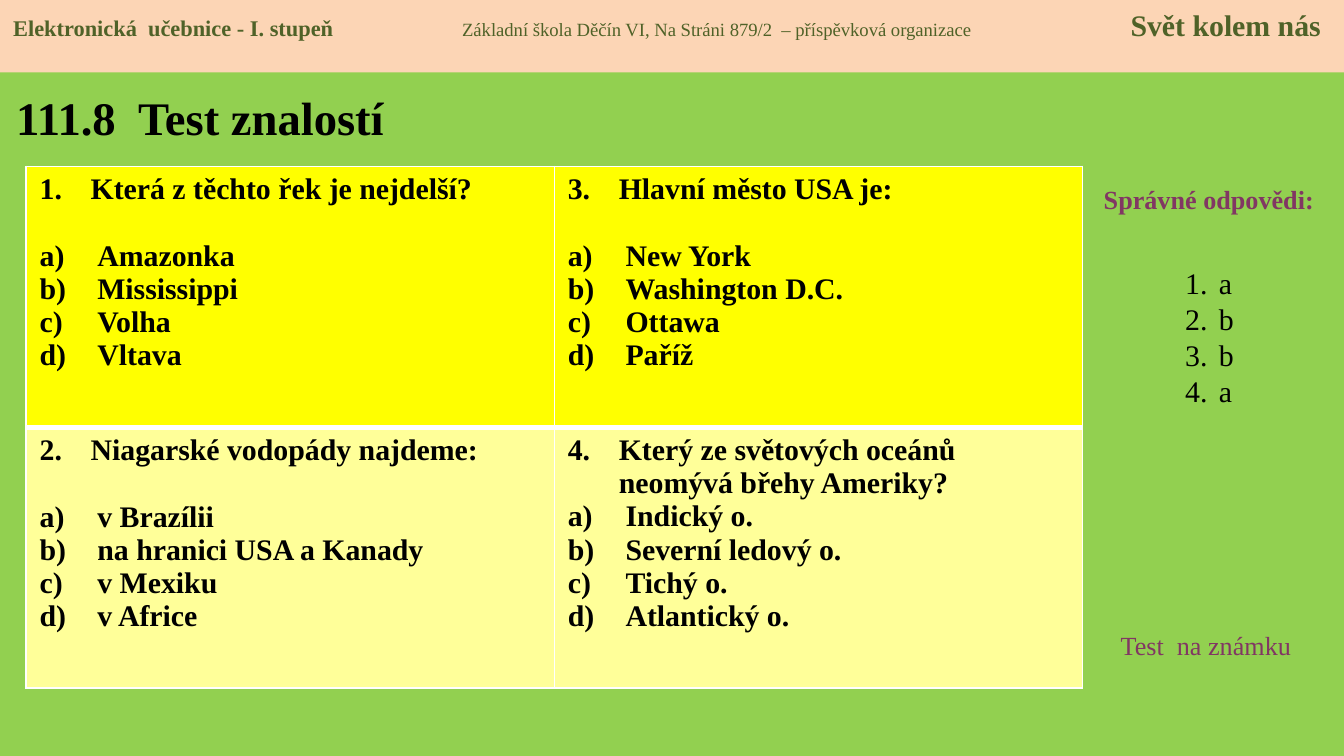
from lxml import etree
from pptx import Presentation
from pptx.dml.color import RGBColor
from pptx.enum.shapes import MSO_SHAPE
from pptx.enum.text import MSO_ANCHOR, PP_ALIGN
from pptx.oxml.ns import qn
from pptx.util import Inches, Pt

RECT = MSO_SHAPE.RECTANGLE
TOP, MIDDLE = MSO_ANCHOR.TOP, MSO_ANCHOR.MIDDLE
LEFT, CENTER = PP_ALIGN.LEFT, PP_ALIGN.CENTER

GREEN = RGBColor(0x92, 0xD0, 0x50)
PEACH = RGBColor(0xFC, 0xD5, 0xB5)
OLIVE = RGBColor(0x4F, 0x62, 0x28)
PLUM = RGBColor(0x81, 0x37, 0x63)
BLACK = RGBColor(0, 0, 0)
WHITE = RGBColor(0xFF, 0xFF, 0xFF)
YELLOW = RGBColor(0xFF, 0xFF, 0)
CREAM = RGBColor(0xFF, 0xFF, 0x99)

FONT = "Times New Roman"
WIDE = Inches(10)
HIGH = WIDE * 9 // 16

# Number, question and options, by table row
QUIZ = [
    [(1, "Která z těchto řek je nejdelší?",
      ["Amazonka", "Mississippi", "Volha", "Vltava"]),
     (3, "Hlavní město USA je:",
      ["New York", "Washington D.C.", "Ottawa", "Paříž"])],
    [(2, "Niagarské vodopády najdeme:",
      ["v Brazílii", "na hranici USA a Kanady", "v Mexiku", "v Africe"]),
     (4, "Který ze světových oceánů neomývá břehy Ameriky?",
      ["Indický o.", "Severní ledový o.", "Tichý o.", "Atlantický o."])],
]
ONE_LINE = 32  # longest question that fits one line


def area(left, top, wide, high):
    """Turn percentages of the slide into a box."""
    return (int(WIDE * left / 100), int(HIGH * top / 100),
            int(WIDE * wide / 100), int(HIGH * high / 100))


def write(para, text, size=16, color=BLACK, bold=False, align=LEFT):
    para.alignment = align
    run = para.add_run()
    run.text = text
    font = run.font
    font.name, font.size, font.bold = FONT, Pt(size), bold
    font.color.rgb = color


def number(para, kind, start=1, indent=0.38):
    props = para._p.get_or_add_pPr()
    props.set("marL", str(Inches(indent)))
    props.set("indent", str(-Inches(indent)))
    mark = etree.SubElement(props, qn("a:buAutoNum"), type=kind)
    if start > 1:
        mark.set("startAt", str(start))


def label(slide, box, text, **form):
    frame = slide.shapes.add_textbox(*box).text_frame
    frame.word_wrap = True
    write(frame.paragraphs[0], text, **form)


def frame_cell(cell, base):
    props = cell._tc.get_or_add_tcPr()
    widths = {"lnL": 1, "lnR": 1, "lnT": 1, "lnB": base}
    for spot, (side, width) in enumerate(widths.items()):
        line = etree.Element(qn("a:" + side), w=str(Pt(width)))
        fill = etree.SubElement(line, qn("a:solidFill"))
        etree.SubElement(fill, qn("a:srgbClr"), val=str(WHITE))
        props.insert(spot, line)


def header(slide, box):
    bar = slide.shapes.add_shape(RECT, *box)
    bar.shadow.inherit = False
    bar.fill.solid()
    bar.fill.fore_color.rgb = PEACH
    bar.line.fill.background()
    frame = bar.text_frame
    frame.word_wrap = True
    frame.vertical_anchor = TOP
    para = frame.paragraphs[0]
    # Tab stops for the school and the subject
    tabs = etree.SubElement(para._p.get_or_add_pPr(), qn("a:tabLst"))
    for inch, kind in ((3.34, "l"), (9.73, "r")):
        etree.SubElement(tabs, qn("a:tab"), pos=str(Inches(inch)), algn=kind)
    write(para, "Elektronická  učebnice - I. stupeň", size=12, color=OLIVE, bold=True)
    write(para, "\tZákladní škola Děčín VI, Na Stráni 879/2  – příspěvková organizace",
          size=10, color=OLIVE)
    write(para, "\tSvět kolem nás", color=OLIVE, bold=True)


def heading(slide, box):
    title = slide.shapes.title
    title.left, title.top, title.width, title.height = box
    frame = title.text_frame
    frame.word_wrap = True
    frame.vertical_anchor = MIDDLE
    write(frame.paragraphs[0], "111.8  Test znalostí", size=25, bold=True)


def question(cell, start, text, options):
    frame = cell.text_frame
    para = frame.paragraphs[0]
    number(para, "arabicPeriod", start)
    write(para, text, bold=True)
    if len(text) < ONE_LINE:
        para.space_after = Pt(18)
    for option in options:
        para = frame.add_paragraph()
        number(para, "alphaLcParenR", indent=0.43)
        write(para, option, bold=True)


def quiz(slide, box):
    rows, cols = len(QUIZ), len(QUIZ[0])
    table = slide.shapes.add_table(rows, cols, *box).table
    table.horz_banding = False
    for col in table.columns:
        col.width = box[2] // cols
    for r, items in enumerate(QUIZ):
        table.rows[r].height = box[3] // rows
        for c, item in enumerate(items):
            cell = table.cell(r, c)
            cell.fill.solid()
            cell.fill.fore_color.rgb = CREAM if r else YELLOW
            frame_cell(cell, 1 if r else 3)
            question(cell, *item)


def answers(slide, box):
    frame = slide.shapes.add_textbox(*box).text_frame
    frame.word_wrap = True
    frame.margin_top = Inches(0.32)
    for i, text in enumerate("abba"):
        para = frame.add_paragraph() if i else frame.paragraphs[0]
        number(para, "arabicPeriod", indent=0.25)
        write(para, text)


def main():
    deck = Presentation()
    deck.slide_width, deck.slide_height = WIDE, HIGH
    slide = deck.slides.add_slide(deck.slide_layouts[5])
    fill = slide.background.fill
    fill.solid()
    fill.fore_color.rgb = GREEN

    heading(slide, area(0.2, 9.7, 31.9, 11.5))
    quiz(slide, area(1.95, 22, 78.6, 69))
    # Answer key at the right
    label(slide, area(80.5, 23.4, 18.9, 6), "Správné odpovědi:",
          size=14, color=PLUM, bold=True, align=CENTER)
    answers(slide, area(87.2, 29.33, 5.5, 35.4))
    label(slide, area(82.4, 82.4, 15.7, 6), "Test  na známku", size=14, color=PLUM)
    header(slide, area(0, 0, 100, 9.6))
    deck.save("out.pptx")


if __name__ == "__main__":
    main()
